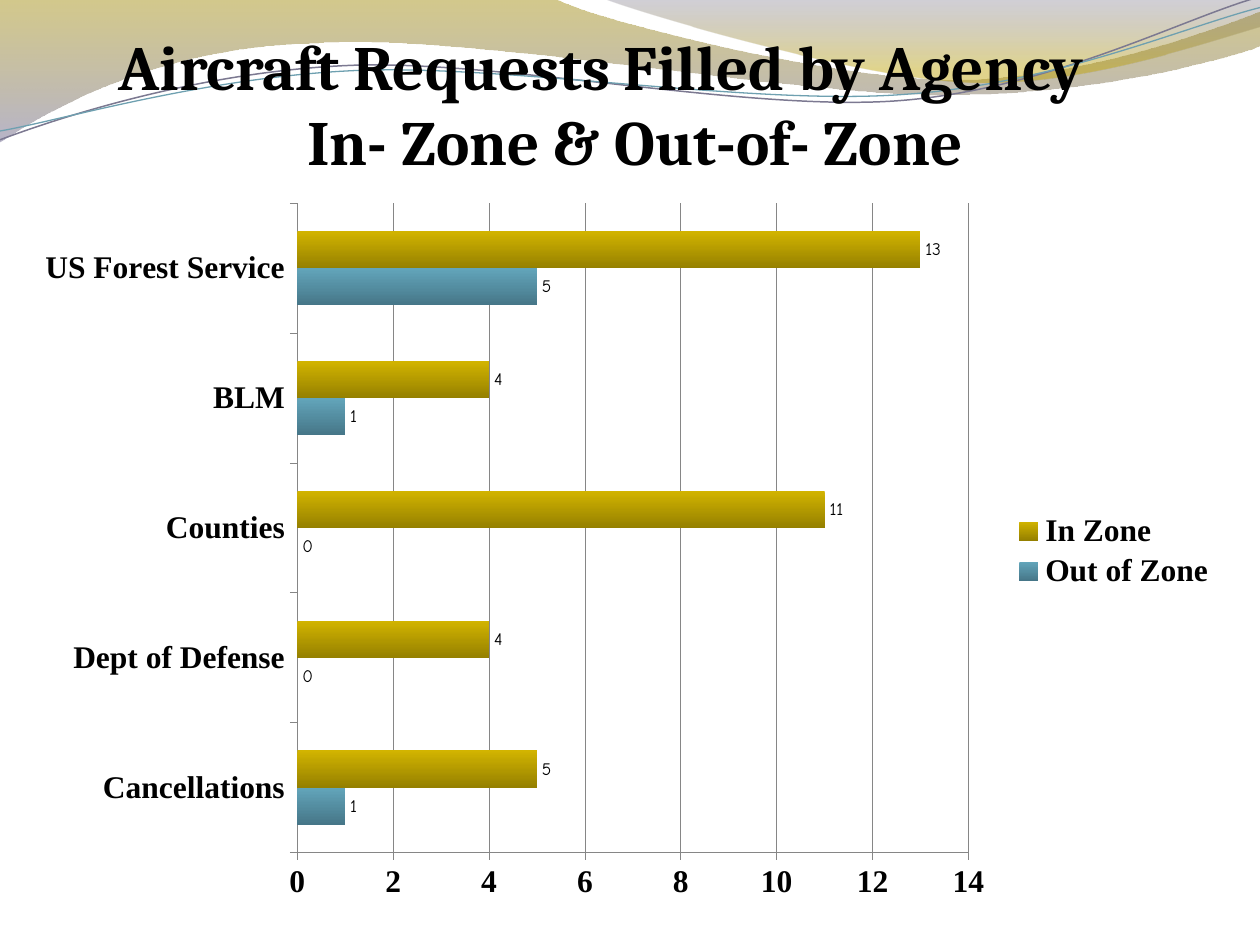
from dataclasses import dataclass

from lxml.etree import SubElement
from pptx import Presentation
from pptx.chart.data import CategoryChartData
from pptx.dml.color import RGBColor as RGB
from pptx.enum.chart import XL_CHART_TYPE, XL_LABEL_POSITION, XL_LEGEND_POSITION, XL_TICK_MARK
from pptx.enum.text import MSO_ANCHOR, MSO_AUTO_SIZE, PP_ALIGN
from pptx.oxml.ns import qn
from pptx.util import Emu, Inches, Pt

W, H = Inches(10), Inches(7.5)
COLORS = {
    "text": "000000", "outline": "4D4D4D", "grid": "868686",
    "olive": "9E8700", "gold": "BDA100", "mauve": "7B769C", "slate": "66627C",
    "violet_line": "7C7991", "blue_line": "6EA0B0",
    "in_top": "D2B400", "in_end": "958000", "out_top": "62A5BA", "out_end": "467688",
}


@dataclass(frozen=True)
class Stop:
    color: str
    position: float
    alpha: int = 100


@dataclass(frozen=True)
class Wave:
    """Segments hold one point for a straight line, three for a Bezier curve."""
    start: tuple
    segments: tuple
    stops: tuple = ()
    line: str = ""
    width: float = 0


@dataclass(frozen=True)
class Series:
    name: str
    values: tuple
    stops: tuple


WAVES = (
    Wave((0, 0), (
        ((4.4, -0.01),),
        ((4.76, 0.17), (6.64, 0.63), (7.58, 0.63)),
        ((8.53, 0.63), (9.58, 0.26), (10, 0.09)),
        ((10.01, 0.36),),
        ((9.83, 0.44), (8.7, 0.76), (7.46, 0.75)),
        ((6.22, 0.75), (3.82, 0.28), (2.57, 0.34)),
        ((1.29, 0.36), (0.46, 0.83), (-0.01, 1.13)),
    ), stops=(Stop("olive", 0, 45), Stop("mauve", 1, 55))),
    Wave((4.79, -0.01), (
        ((5.09, 0.11), (6.82, 0.62), (7.69, 0.65)),
        ((8.56, 0.69), (9.61, 0.32), (10, 0.21)),
        ((10, 0),),
    ), stops=(Stop("slate", 0, 30), Stop("gold", 0.8, 45))),
    Wave((0, 1.11), (
        ((0.48, 0.93), (1.58, 0.57), (2.77, 0.52)),
        ((3.95, 0.47), (5.93, 0.89), (7.13, 0.8)),
        ((8.33, 0.71), (9.38, 0.15), (9.98, -0.02)),
    ), line="violet_line", width=0.85),
    Wave((0, 1.04), (
        ((0.47, 0.96), (1.64, 0.61), (2.83, 0.56)),
        ((4.03, 0.51), (5.97, 0.84), (7.17, 0.75)),
        ((8.36, 0.67), (9.41, 0.21), (10, 0.06)),
    ), line="blue_line", width=0.75),
)
AGENCIES = ("Cancellations", "Dept of Defense", "Counties", "BLM", "US Forest Service")
SERIES = (
    Series("Out of Zone", (1, 0, 0, 1, 5), (Stop("out_top", 0), Stop("out_end", 1))),
    Series("In Zone", (5, 4, 11, 4, 13), (Stop("in_top", 0), Stop("in_end", 1))),
)


def rgb(name: str) -> RGB:
    return RGB.from_string(COLORS[name])


def frame(x: float, y: float, w: float, h: float) -> tuple:
    """Turn percentages of the slide into left, top, width and height."""
    return tuple(Emu(int(share * side / 100)) for share, side in zip((x, y, w, h), (W, H, W, H)))


def style_font(font, *, size: float, name: str, bold: bool = False) -> None:
    font.size, font.name, font.bold = Pt(size), name, bold
    font.color.rgb = rgb("text")


def fill_gradient(fill, stops: tuple) -> None:
    """Fill from top to bottom."""
    fill.gradient()
    fill.gradient_angle = 270
    for target, stop in zip(fill.gradient_stops, stops):
        target.color.rgb = rgb(stop.color)
        target.position = stop.position


def bend(sp, segments: tuple) -> None:
    """Join the straight steps of each three-point segment into one curve."""
    steps = iter(list(sp._element.iter(qn("a:lnTo"))))
    for segment in segments:
        first, *others = [next(steps) for _ in segment]
        if others:
            first.tag = qn("a:cubicBezTo")
            for step in others:
                first.append(step[0])
                step.getparent().remove(step)


def draw_wave(s, wave: Wave) -> None:
    points = [wave.start, *(point for segment in wave.segments for point in segment)]
    emu = [(Inches(x), Inches(y)) for x, y in points]
    builder = s.shapes.build_freeform(*emu[0])
    builder.add_line_segments(emu[1:], close=False)
    sp = builder.convert_to_shape()
    bend(sp, wave.segments)
    sp.shadow.inherit = False
    if wave.stops:
        SubElement(next(sp._element.iter(qn("a:path"))), qn("a:close"))
        sp.line.fill.background()
        fill_gradient(sp.fill, wave.stops)
        for clr, stop in zip(sp._element.iter(qn("a:srgbClr")), wave.stops):
            SubElement(clr, qn("a:alpha"), val=str(stop.alpha * 1000))
    else:
        sp.fill.background()
        sp.line.color.rgb = rgb(wave.line)
        sp.line.width = Pt(wave.width)


def add_title_line(p, text: str, *, left: float = 0) -> None:
    p.alignment = PP_ALIGN.CENTER
    pPr = p._p.get_or_add_pPr()
    pPr.set("marL", str(Inches(left)))
    pPr.set("indent", "0")
    r = p.add_run()
    r.text = text
    style_font(r.font, size=36, name="Cambria", bold=True)
    rPr = r._r.get_or_add_rPr()
    ln = rPr.makeelement(qn("a:ln"), {"w": str(Pt(0.9))})
    SubElement(SubElement(ln, qn("a:solidFill")), qn("a:srgbClr"), val=COLORS["outline"])
    rPr.insert(0, ln)


def draw_title(s) -> None:
    title = s.shapes.title
    s.shapes._spTree.append(title._element)  # in front of the waves
    title.left, title.top, title.width, title.height = frame(2.5, 2.13, 95.8, 17.47)
    tf = title.text_frame
    tf.word_wrap, tf.auto_size = True, MSO_AUTO_SIZE.SHAPE_TO_FIT_TEXT
    tf.vertical_anchor = MSO_ANCHOR.MIDDLE
    shift = 0.54  # the first line is centred left of the second
    tf.margin_right = Inches(0.1 + shift)
    add_title_line(tf.paragraphs[0], "Aircraft Requests Filled by Agency")
    add_title_line(tf.add_paragraph(), "In- Zone & Out-of- Zone", left=shift)


def set_layout(parent, before: str, *, inner: bool = False, **percent: float) -> None:
    """Place a chart part by percentages of the chart, ahead of the named child."""
    for old in parent.findall(qn("c:layout")):
        parent.remove(old)
    layout = parent.makeelement(qn("c:layout"), {})
    manual = SubElement(layout, qn("c:manualLayout"))
    if inner:
        SubElement(manual, qn("c:layoutTarget"), val="inner")
    for key in ("x", "y"):
        SubElement(manual, qn(f"c:{key}Mode"), val="edge")
    for key, share in percent.items():
        SubElement(manual, qn(f"c:{key}"), val=str(share / 100))
    parent.find(qn(before)).addprevious(layout)


def draw_chart(s) -> None:
    data = CategoryChartData()
    data.categories = AGENCIES
    for series in SERIES:
        data.add_series(series.name, series.values)
    chart = s.shapes.add_chart(XL_CHART_TYPE.BAR_CLUSTERED,
                               *frame(1.7, 20, 95.8, 76.67), data).chart
    style_font(chart.font, size=10, name="Cambria")
    chart.has_title = False
    chart.has_legend = True
    legend = chart.legend
    legend.position, legend.include_in_layout = XL_LEGEND_POSITION.RIGHT, False
    style_font(legend.font, size=18, name="Times New Roman", bold=True)
    axis = chart.value_axis
    axis.minimum_scale, axis.maximum_scale, axis.major_unit = 0, 14, 2
    for part in (chart.category_axis, axis):
        part.major_tick_mark = XL_TICK_MARK.OUTSIDE
        style_font(part.tick_labels.font, size=18, name="Times New Roman", bold=True)
    for ruled in (chart.category_axis, axis, axis.major_gridlines):
        ruled.format.line.color.rgb = rgb("grid")
        ruled.format.line.width = Pt(0.5)

    plot = chart.plots[0]
    plot.gap_width, plot.overlap, plot.vary_by_categories = 150, 0, False
    for drawn, series in zip(plot.series, SERIES):
        fill_gradient(drawn.format.fill, series.stops)
        labels = drawn.data_labels
        labels.show_value, labels.position = True, XL_LABEL_POSITION.OUTSIDE_END
        style_font(labels.font, size=10, name="Comic Neue")
    set_layout(plot._element.getparent(), "c:barChart", inner=True,
               x=22.86, y=2, w=55.6, h=89.6)
    set_layout(legend._element, "c:overlay", x=82, y=44, w=17, h=12)


def main() -> None:
    prs = Presentation()
    prs.slide_width, prs.slide_height = W, H
    s = prs.slides.add_slide(prs.slide_layouts[5])
    for wave in WAVES:
        draw_wave(s, wave)
    draw_title(s)
    draw_chart(s)
    prs.save("out.pptx")


if __name__ == "__main__":
    main()
